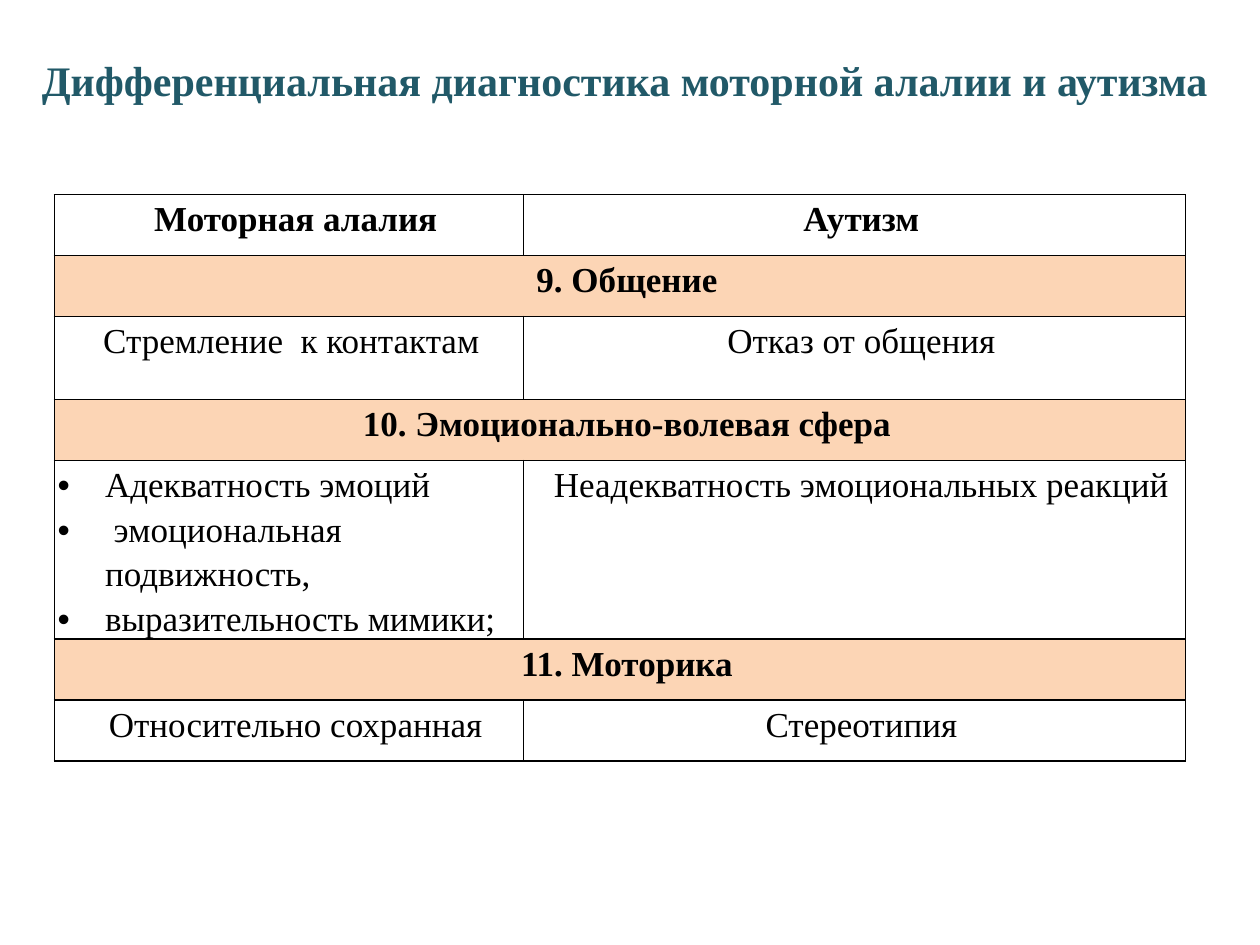
from lxml.etree import SubElement
from pptx import Presentation
from pptx.dml.color import RGBColor
from pptx.enum.text import MSO_ANCHOR, PP_ALIGN
from pptx.oxml.ns import qn
from pptx.util import Pt

COLORS = {"title": "215968", "text": "000000", "border": "000000", "section": "FCD5B5"}
FONT = "Times New Roman"
COLUMN_WIDTHS = [268, 378.5]
ROW_HEIGHTS = [34.8, 34.8, 47.5, 34.8, 91.4, 34.8, 34.8]
HEADER = ("Моторная алалия", "Аутизм")
# Section heading, then its left and right cells; a list becomes bullets.
SECTIONS = [
    ("9. Общение", "Стремление  к контактам ", "Отказ от общения"),
    (
        "10. Эмоционально-волевая сфера",
        ["Адекватность эмоций", " эмоциональная подвижность,", "выразительность мимики;"],
        "Неадекватность эмоциональных реакций",
    ),
    ("11. Моторика", "Относительно сохранная", "Стереотипия"),
]


def format_font(paragraph, size, color, bold):
    font = paragraph.font
    font.name, font.size, font.bold = FONT, Pt(size), bold
    font.color.rgb = RGBColor.from_string(COLORS[color])


def add_title(slide, text):
    title = slide.shapes.title
    title.left, title.top, title.width, title.height = Pt(0), Pt(21), Pt(720), Pt(49)
    title.text_frame.vertical_anchor = MSO_ANCHOR.MIDDLE
    paragraph = title.text_frame.paragraphs[0]
    paragraph.text = text
    paragraph.alignment = PP_ALIGN.CENTER
    format_font(paragraph, 24, "title", True)


def set_indent(paragraph, margin, first_line):
    properties = paragraph._p.get_or_add_pPr()
    properties.set("marL", str(Pt(margin)))
    properties.set("indent", str(Pt(first_line)))
    return properties


def add_bullet(paragraph):
    properties = set_indent(paragraph, 27, -27)
    SubElement(properties, qn("a:buFont"), typeface="Arial")
    SubElement(properties, qn("a:buChar"), char="•")
    tabs = SubElement(properties, qn("a:tabLst"))
    SubElement(tabs, qn("a:tab"), pos=str(Pt(18)), algn="l")


def add_borders(cell):
    properties = cell._tc.get_or_add_tcPr()
    for side in ("lnL", "lnR", "lnT", "lnB"):
        line = SubElement(properties, qn(f"a:{side}"), w=str(Pt(1)))
        fill = SubElement(line, qn("a:solidFill"))
        SubElement(fill, qn("a:srgbClr"), val=COLORS["border"])


def format_cell(cell):
    cell.margin_left = cell.margin_right = Pt(2)
    cell.margin_top = cell.margin_bottom = Pt(0)
    add_borders(cell)
    cell.fill.background()


def fill_cell(cell, content, bold=False, space_before=3.8):
    bulleted = isinstance(content, list)
    cell.text = "\n".join(content) if bulleted else content
    for paragraph in cell.text_frame.paragraphs:
        paragraph.line_spacing = 1.15
        if bulleted:
            add_bullet(paragraph)
        else:
            paragraph.alignment = PP_ALIGN.CENTER
            paragraph.space_before = Pt(space_before)
            set_indent(paragraph, 0, 8)
        format_font(paragraph, 20, "text", bold)


def add_comparison_table(slide):
    frame = slide.shapes.add_table(
        len(ROW_HEIGHTS), len(COLUMN_WIDTHS),
        Pt(31), Pt(111.3), Pt(sum(COLUMN_WIDTHS)), Pt(sum(ROW_HEIGHTS)),
    )
    table = frame.table
    table.first_row = table.horz_banding = False
    for column, width in zip(table.columns, COLUMN_WIDTHS):
        column.width = Pt(width)
    for row, height in zip(table.rows, ROW_HEIGHTS):
        row.height = Pt(height)
    for cell in table.iter_cells():
        format_cell(cell)

    for column, text in enumerate(HEADER):
        fill_cell(table.cell(0, column), text, bold=True, space_before=6)
    for index, (heading, left, right) in enumerate(SECTIONS):
        row = 1 + 2 * index
        heading_cell = table.cell(row, 0)
        heading_cell.merge(table.cell(row, 1))
        heading_cell.fill.solid()
        heading_cell.fill.fore_color.rgb = RGBColor.from_string(COLORS["section"])
        fill_cell(heading_cell, heading, bold=True)
        fill_cell(table.cell(row + 1, 0), left, space_before=6)
        fill_cell(table.cell(row + 1, 1), right)


def main():
    presentation = Presentation()
    presentation.slide_width, presentation.slide_height = Pt(720), Pt(540)
    slide = presentation.slides.add_slide(presentation.slide_layouts.get_by_name("Title Only"))
    add_title(slide, "Дифференциальная диагностика моторной алалии и аутизма ")
    add_comparison_table(slide)
    presentation.save("out.pptx")


if __name__ == "__main__":
    main()
